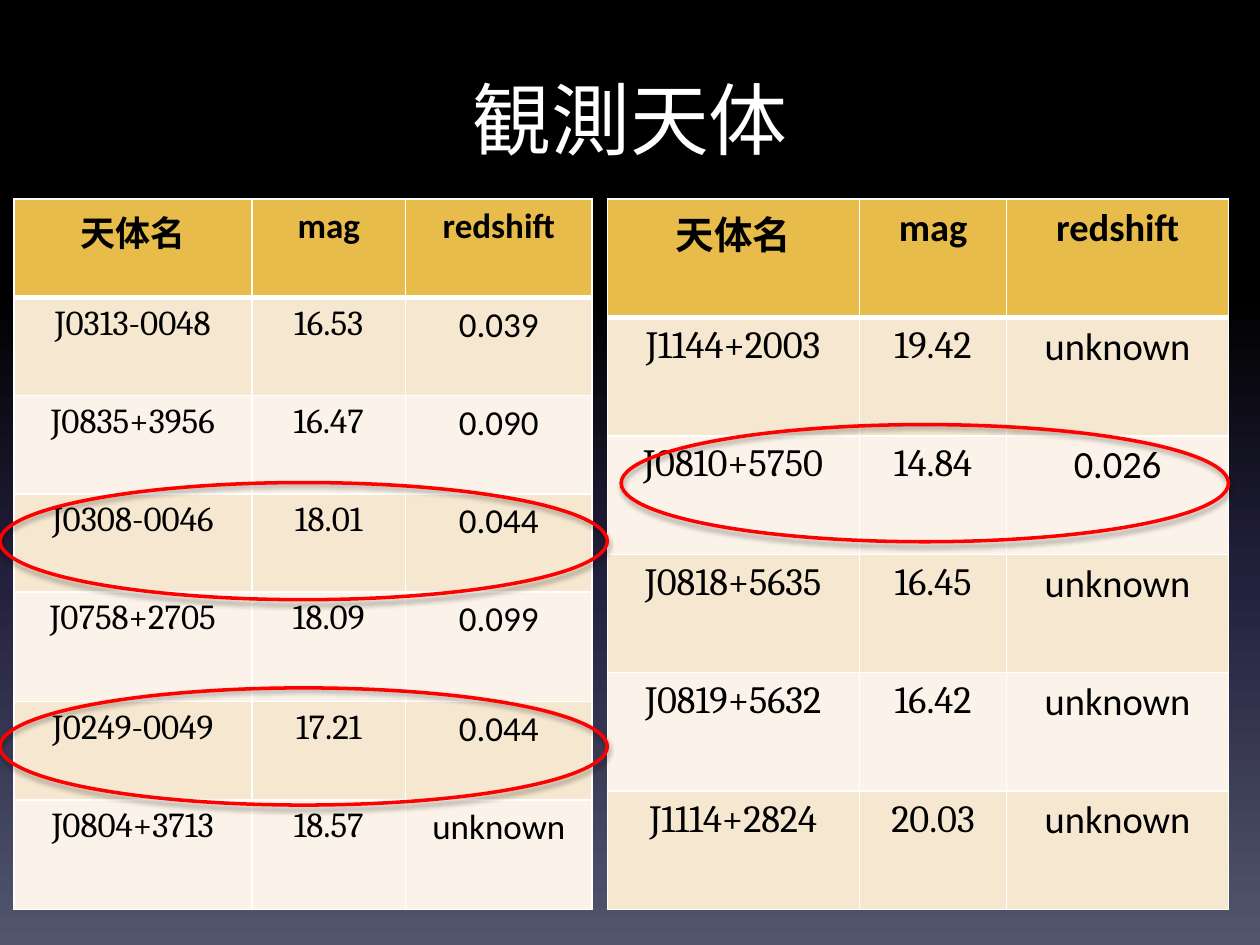
from lxml import etree
from pptx import Presentation
from pptx.dml.color import RGBColor
from pptx.enum.shapes import MSO_SHAPE
from pptx.enum.text import MSO_ANCHOR, PP_ALIGN
from pptx.oxml import parse_xml
from pptx.oxml.ns import nsdecls, qn
from pptx.util import Inches, Pt

CENTER = PP_ALIGN.CENTER
MIDDLE = MSO_ANCHOR.MIDDLE
OVAL = MSO_SHAPE.OVAL

WHITE = RGBColor(0xFF, 0xFF, 0xFF)
BLACK = RGBColor(0, 0, 0)
RED = RGBColor(0xFF, 0, 0)
GOLD = RGBColor(0xE8, 0xBC, 0x4A)
SAND = RGBColor(0xF6, 0xE7, 0xD0)
CREAM = RGBColor(0xFB, 0xF3, 0xE9)
NAVY = RGBColor(0x24, 0x21, 0x3E)
SLATE = RGBColor(0x51, 0x56, 0x6D)

STOPS = [(0, BLACK), (31, BLACK), (62, NAVY), (100, SLATE)]
HEAD = ("天体名", "mag", "redshift")
FONTS = ("Cambria", "Cambria", "Calibri")
TOP = 1.58

LEFT_ROWS = [
    ("J0313-0048", "16.53", "0.039"),
    ("J0835+3956", "16.47", "0.090"),
    ("J0308-0046", "18.01", "0.044"),
    ("J0758+2705", "18.09", "0.099"),
    ("J0249-0049", "17.21", "0.044"),
    ("J0804+3713", "18.57", "unknown"),
]
RIGHT_ROWS = [
    ("J1144+2003", "19.42", "unknown"),
    ("J0810+5750", "14.84", "0.026"),
    ("J0818+5635", "16.45", "unknown"),
    ("J0819+5632", "16.42", "unknown"),
    ("J1114+2824", "20.03", "unknown"),
]
RINGS = [(0, 3.83), (0, 5.46), (4.93, 3.37)]


def set_back(slide):
    slide.background.fill.gradient()
    grad = next(slide.element.iter(qn("a:gradFill")))
    stops = grad.find(qn("a:gsLst"))
    for stop in list(stops):
        stops.remove(stop)
    for pos, color in STOPS:
        stop = etree.SubElement(stops, qn("a:gs"), pos=str(pos * 1000))
        etree.SubElement(stop, qn("a:srgbClr"), val=str(color))
    grad.find(qn("a:lin")).set("ang", "5400000")


def put_text(frame, text, color, **style):
    para = frame.paragraphs[0]
    para.alignment = CENTER
    run = para.add_run()
    run.text = text
    run.font.color.rgb = color
    for name, value in style.items():
        setattr(run.font, name, value)


def add_title(slide, text):
    box = slide.shapes.add_textbox(Inches(0.5), Inches(0.5), Inches(9), Inches(0.87))
    frame = box.text_frame
    frame.word_wrap = True
    frame.vertical_anchor = MIDDLE
    put_text(frame, text, WHITE, size=Pt(45), name="Calibri")


def set_edges(cell, row):
    # The rule under the header row is thicker
    widths = {"L": 1, "R": 1, "T": 3 if row == 1 else 1, "B": 3 if row == 0 else 1}
    props = cell._tc.get_or_add_tcPr()
    for side, width in widths.items():
        props.append(parse_xml(
            f'<a:ln{side} {nsdecls("a")} w="{Pt(width)}"><a:solidFill>'
            f'<a:srgbClr val="{WHITE}"/></a:solidFill></a:ln{side}>'))


def add_grid(slide, left, widths, heights, rows, size):
    data = [HEAD] + rows
    shape = slide.shapes.add_table(
        len(data), len(HEAD), Inches(left), Inches(TOP),
        Inches(sum(widths)), Inches(sum(heights)))
    table = shape.table
    for col, width in zip(table.columns, widths):
        col.width = Inches(width)
    for row, height in zip(table.rows, heights):
        row.height = Inches(height)
    for r, line in enumerate(data):
        fill = GOLD if r == 0 else SAND if r % 2 else CREAM
        for c, text in enumerate(line):
            cell = table.cell(r, c)
            set_edges(cell, r)
            cell.fill.solid()
            cell.fill.fore_color.rgb = fill
            font = "Calibri" if r == 0 else FONTS[c]
            put_text(cell.text_frame, text, BLACK, size=Pt(size), name=font, bold=r == 0)


def add_ring(slide, left, top):
    ring = slide.shapes.add_shape(
        OVAL, Inches(left), Inches(top), Inches(4.82), Inches(0.93))
    ring.fill.background()
    ring.line.color.rgb = RED
    ring.line.width = Pt(2)
    # Soft shadow straight below
    ring._element.spPr.append(parse_xml(
        f'<a:effectLst {nsdecls("a")}><a:outerShdw blurRad="{Pt(3.1)}" '
        f'dist="{Pt(1.8)}" dir="5400000" rotWithShape="0">'
        f'<a:srgbClr val="{BLACK}"><a:alpha val="35000"/></a:srgbClr>'
        '</a:outerShdw></a:effectLst>'))


def main():
    deck = Presentation()
    deck.slide_width, deck.slide_height = Inches(10), Inches(7.5)
    slide = deck.slides.add_slide(deck.slide_layouts[6])

    # Background and title
    set_back(slide)
    add_title(slide, "観測天体")

    # Object tables
    add_grid(slide, 0.11, (1.89, 1.22, 1.48), [0.78] * 4 + [0.87, 0.78, 0.87],
             LEFT_ROWS, 20)
    add_grid(slide, 4.82, (2, 1.17, 1.76), [0.94] * 6, RIGHT_ROWS, 22)

    # Rings around the chosen objects
    for left, top in RINGS:
        add_ring(slide, left, top)

    deck.save("out.pptx")


if __name__ == "__main__":
    main()
